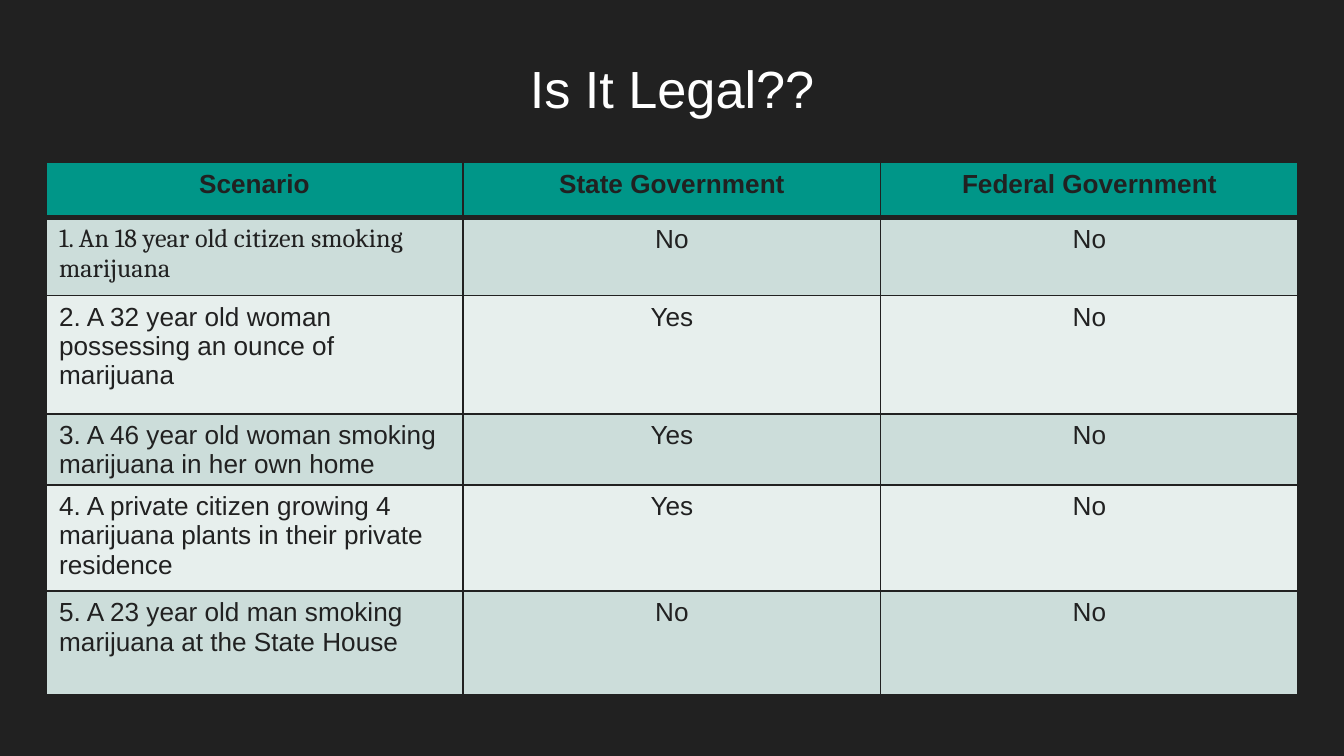
import pptx
import pptx.dml.color
import pptx.enum.text
import pptx.oxml
import pptx.oxml.ns
import pptx.util

DARK = pptx.dml.color.RGBColor(0x21, 0x21, 0x21)
WHITE = pptx.dml.color.RGBColor(0xFF, 0xFF, 0xFF)
TEAL = pptx.dml.color.RGBColor(0x00, 0x96, 0x88)
MINT = pptx.dml.color.RGBColor(0xCC, 0xDD, 0xDA)
PALE = pptx.dml.color.RGBColor(0xE7, 0xEF, 0xED)
CENTER = pptx.enum.text.PP_ALIGN.CENTER
LEFT = pptx.enum.text.PP_ALIGN.LEFT

VERDICTS = [
    ("Scenario", "State Government", "Federal Government"),
    ("1. An 18 year old citizen smoking marijuana", "No", "No"),
    ("2. A 32 year old woman possessing an ounce of marijuana", "Yes", "No"),
    ("3. A 46 year old woman smoking marijuana in her own home", "Yes", "No"),
    ("4. A private citizen growing 4 marijuana plants in their private residence", "Yes", "No"),
    ("5. A 23 year old man smoking marijuana at the State House", "No", "No"),
]
ROW_HEIGHTS = [0.41, 0.58, 0.88, 0.53, 0.79, 0.77]


def write(paragraph, text, align, **font_values):
    paragraph.alignment = align
    run = paragraph.add_run()
    run.text = text
    color = font_values.pop("color")
    for attribute, value in font_values.items():
        setattr(run.font, attribute, value)
    run.font.color.rgb = color


def add_borders(cell, widths):
    """Append one line per side; call before the fill, which must follow in the XML."""
    for side, points in widths.items():
        cell._tc.get_or_add_tcPr().append(pptx.oxml.parse_xml(
            f'<a:ln{side} {pptx.oxml.ns.nsdecls("a")} w="{pptx.util.Pt(points)}">'
            f'<a:solidFill><a:srgbClr val="{DARK}"/></a:solidFill></a:ln{side}>'))


deck = pptx.Presentation()
deck.slide_width = pptx.util.Inches(10)
deck.slide_height = deck.slide_width * 9 // 16
slide = deck.slides.add_slide(deck.slide_layouts[6])
slide.background.fill.solid()
slide.background.fill.fore_color.rgb = DARK

margin = int(deck.slide_width * 0.034)
content_width = deck.slide_width - 2 * margin

heading = slide.shapes.add_textbox(
    margin, pptx.util.Inches(0.32), content_width, pptx.util.Inches(0.63)).text_frame
heading.word_wrap = True
for side in ("left", "top", "right", "bottom"):
    setattr(heading, f"margin_{side}", pptx.util.Inches(0.1))
write(heading.paragraphs[0], "Is It Legal??", CENTER,
      name="Arial", size=pptx.util.Pt(28), color=WHITE)

verdict_table = slide.shapes.add_table(
    len(VERDICTS), len(VERDICTS[0]), margin, pptx.util.Inches(1.21),
    content_width, pptx.util.Inches(sum(ROW_HEIGHTS))).table

for row, (height, verdicts) in enumerate(zip(ROW_HEIGHTS, VERDICTS)):
    verdict_table.rows[row].height = pptx.util.Inches(height)
    is_header = row == 0
    band = TEAL if is_header else MINT if row % 2 else PALE
    for column, text in enumerate(verdicts):
        cell = verdict_table.cell(row, column)
        cell.margin_bottom = 0
        add_borders(cell, {"L": 1, "R": 1, "T": 3 if row == 1 else 1, "B": 3 if is_header else 1})
        cell.fill.solid()
        cell.fill.fore_color.rgb = band
        write(cell.text_frame.paragraphs[0], text,
              CENTER if is_header or column else LEFT,
              name="Cambria" if (row, column) == (1, 0) else "Arial",
              size=pptx.util.Pt(14), bold=is_header, color=DARK)

deck.save("out.pptx")
